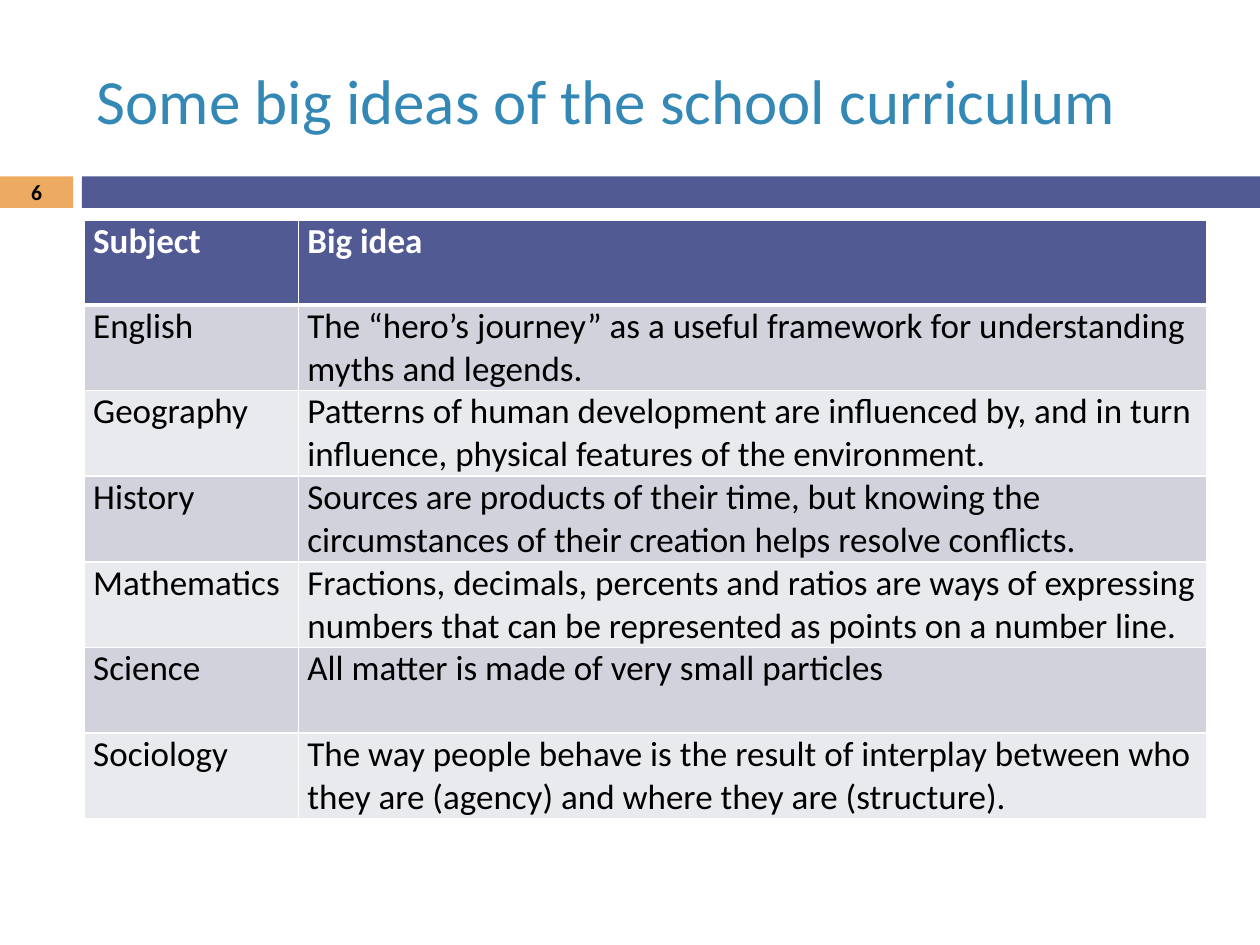
from pptx import Presentation
from pptx import util as u
from pptx.dml.color import RGBColor
from pptx.enum import shapes, text
from pptx.oxml import ns
from lxml import etree

FONT = "Calibri"
COLORS = {
    "title": "3488B6",
    "accent": "EDAA61",
    "header": "525A93",
    "odd": "D1D2DC",
    "even": "E9EAEE",
    "white": "FFFFFF",
    "black": "000000",
}
ROWS = [
    ("Subject", "Big idea"),
    ("English", "The “hero’s journey” as a useful framework for understanding myths and legends."),
    ("Geography", "Patterns of human development are influenced by, and in turn influence, physical features of the environment."),
    ("History", "Sources are products of their time, but knowing the circumstances of their creation helps resolve conflicts."),
    ("Mathematics", "Fractions, decimals, percents and ratios are ways of expressing numbers that can be represented as points on a number line."),
    ("Science", "All matter is made of very small particles"),
    ("Sociology", "The way people behave is the result of interplay between who they are (agency) and where they are (structure)."),
]
COLUMN_WIDTHS = (1.7, 7.21)
HEADER_HEIGHT = 0.67
ROW_HEIGHT = 0.68


def color(name):
    return RGBColor.from_string(COLORS[name])


def format_text(text_frame, size, color_name, bold=False):
    for paragraph in text_frame.paragraphs:
        for run in paragraph.runs:
            run.font.name = FONT
            run.font.size = u.Pt(size)
            run.font.bold = bold
            run.font.color.rgb = color(color_name)


def add_bar(slide, left, width, fill):
    shape = slide.shapes.add_shape(
        shapes.MSO_SHAPE.RECTANGLE,
        u.Inches(left), u.Inches(1.4), u.Inches(width), u.Inches(0.25))
    shape.shadow.inherit = False
    shape.fill.solid()
    shape.fill.fore_color.rgb = color(fill)
    shape.line.fill.background()


def add_label(slide, content, box, size, color_name, bold=False, align=text.PP_ALIGN.LEFT):
    shape = slide.shapes.add_textbox(*[u.Inches(length) for length in box])
    frame = shape.text_frame
    frame.word_wrap = True
    frame.vertical_anchor = text.MSO_ANCHOR.MIDDLE
    frame.text = content
    frame.paragraphs[0].alignment = align
    format_text(frame, size, color_name, bold)


def set_borders(cell, top, bottom):
    properties = cell._tc.get_or_add_tcPr()
    for side, width in (("L", 1), ("R", 1), ("T", top), ("B", bottom)):
        line = etree.SubElement(properties, ns.qn(f"a:ln{side}"), w=str(u.Pt(width)))
        fill = etree.SubElement(line, ns.qn("a:solidFill"))
        etree.SubElement(fill, ns.qn("a:srgbClr"), val=COLORS["white"])


def fill_cell(cell, content, row_index):
    is_header = row_index == 0
    cell.margin_left = cell.margin_right = u.Inches(0.07)
    cell.margin_top = cell.margin_bottom = 0
    set_borders(cell, 3 if row_index == 1 else 1, 3 if is_header else 1)
    cell.fill.solid()
    cell.fill.fore_color.rgb = color(
        "header" if is_header else "odd" if row_index % 2 else "even")
    cell.text_frame.text = content
    format_text(cell.text_frame, 20, "white" if is_header else "black", is_header)


def add_ideas_table(slide):
    height = HEADER_HEIGHT + ROW_HEIGHT * (len(ROWS) - 1)
    table = slide.shapes.add_table(
        len(ROWS), len(COLUMN_WIDTHS), u.Inches(0.67), u.Inches(1.75),
        u.Inches(sum(COLUMN_WIDTHS)), u.Inches(height)).table
    for column, width in zip(table.columns, COLUMN_WIDTHS):
        column.width = u.Inches(width)
    for row_index, contents in enumerate(ROWS):
        table.rows[row_index].height = u.Inches(ROW_HEIGHT if row_index else HEADER_HEIGHT)
        for column_index, content in enumerate(contents):
            fill_cell(table.cell(row_index, column_index), content, row_index)


def main():
    presentation = Presentation()
    presentation.slide_width = u.Inches(10)
    presentation.slide_height = u.Inches(7.5)
    slide = presentation.slides.add_slide(presentation.slide_layouts[6])
    add_bar(slide, 0, 0.58, "accent")
    add_bar(slide, 0.65, 9.35, "header")
    add_label(slide, "Some big ideas of the school curriculum", (0.67, 0.25, 8.92, 1.08), 36, "title")
    add_label(slide, "6", (0, 1.39, 0.58, 0.27), 12.4, "black", True, text.PP_ALIGN.CENTER)
    add_ideas_table(slide)
    presentation.save("out.pptx")


if __name__ == "__main__":
    main()
